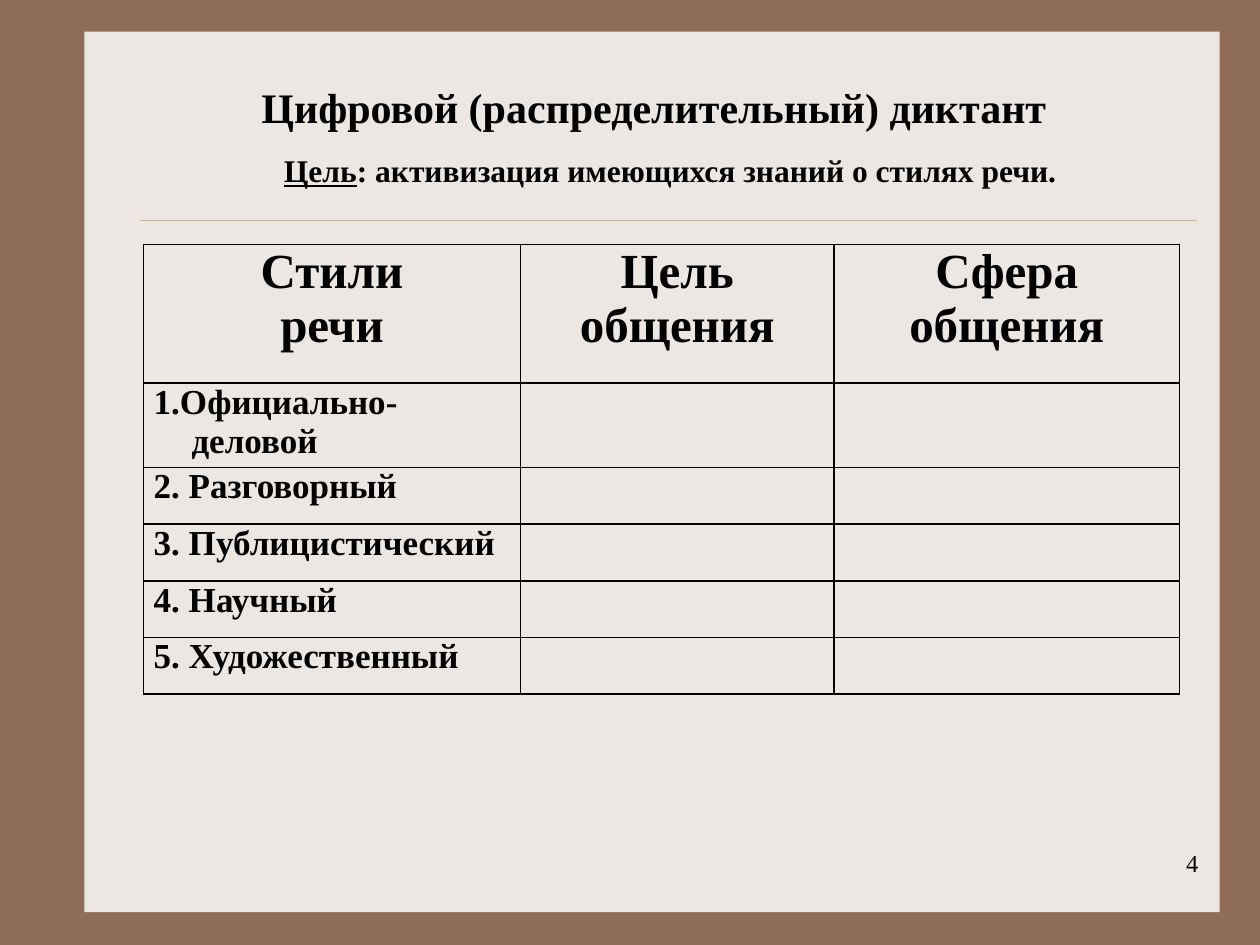
from lxml import etree
from pptx import Presentation
from pptx.dml.color import RGBColor
from pptx.enum.shapes import MSO_CONNECTOR, MSO_SHAPE
from pptx.enum.text import MSO_ANCHOR, PP_ALIGN
from pptx.oxml import parse_xml
from pptx.oxml.ns import nsdecls, qn
from pptx.util import Inches, Pt

FONT = "Times New Roman"
BLACK = RGBColor(0x00, 0x00, 0x00)
BROWN = RGBColor(0x90, 0x6D, 0x58)
CREAM = RGBColor(0xED, 0xE7, 0xE3)
GOLD = RGBColor(0xCB, 0xBD, 0x83)

TITLE = "Цифровой (распределительный) диктант"
GOAL = ["Цель", ": активизация имеющихся знаний о стилях речи."]
PAGE_NUMBER = "4"
HEADERS = ["Стили\nречи", "Цель\nобщения", "Сфера общения"]
STYLES = ["1.Официально-деловой", "2. Разговорный", "3. Публицистический",
          "4. Научный", "5. Художественный"]
COLUMN_WIDTHS = [2.99, 2.49, 2.74]
ROW_HEIGHTS = [1.1, 0.67] + [0.45] * 4


def format_text(text_frame, size, alignment, bold=True):
    for paragraph in text_frame.paragraphs:
        paragraph.alignment = alignment
        for run in paragraph.runs:
            run.font.name = FONT
            run.font.size = Pt(size)
            run.font.bold = bold
            run.font.color.rgb = BLACK


def add_text_box(slide, box):
    text_frame = slide.shapes.add_textbox(*map(Inches, box)).text_frame
    text_frame.word_wrap = True
    return text_frame


def add_borders(cell):
    """Draw a thin black line on each side of the cell."""
    properties = cell._tc.get_or_add_tcPr()
    for index, side in enumerate(("lnL", "lnR", "lnT", "lnB")):
        properties.insert(index, parse_xml(
            f'<a:{side} {nsdecls("a")} w="{Pt(1)}"><a:solidFill>'
            f'<a:srgbClr val="{BLACK}"/></a:solidFill></a:{side}>'))


def add_styles_table(slide):
    frame = slide.shapes.add_table(
        len(ROW_HEIGHTS), len(COLUMN_WIDTHS), Inches(1.14), Inches(1.94),
        Inches(sum(COLUMN_WIDTHS)), Inches(sum(ROW_HEIGHTS)))
    table = frame.table
    table.first_row = table.horz_banding = False
    for column, width in zip(table.columns, COLUMN_WIDTHS):
        column.width = Inches(width)
    for row, height in zip(table.rows, ROW_HEIGHTS):
        row.height = Inches(height)
    for cell in table.iter_cells():
        cell.fill.background()
        cell.margin_left = cell.margin_right = Inches(0.08)
        cell.margin_top = cell.margin_bottom = 0
        add_borders(cell)

    for column, header in enumerate(HEADERS):
        text_frame = table.cell(0, column).text_frame
        text_frame.text = header
        format_text(text_frame, 28, PP_ALIGN.CENTER)
    for row, style in enumerate(STYLES, start=1):
        text_frame = table.cell(row, 0).text_frame
        text_frame.text = style
        format_text(text_frame, 20, PP_ALIGN.JUSTIFY)
    hanging = table.cell(1, 0).text_frame.paragraphs[0]._p.get_or_add_pPr()
    hanging.set("marL", str(Inches(0.3)))
    hanging.set("indent", str(Inches(-0.3)))


def main():
    presentation = Presentation()
    presentation.slide_width, presentation.slide_height = Inches(10), Inches(7.5)
    slide = presentation.slides.add_slide(presentation.slide_layouts[5])
    slide.background.fill.solid()
    slide.background.fill.fore_color.rgb = BROWN

    panel = slide.shapes.add_shape(
        MSO_SHAPE.RECTANGLE, *map(Inches, (0.67, 0.25, 9.01, 6.99)))
    panel.shadow.inherit = False
    panel.fill.solid()
    panel.fill.fore_color.rgb = CREAM
    panel.line.fill.background()

    divider = slide.shapes.add_connector(
        MSO_CONNECTOR.STRAIGHT, *map(Inches, (1.11, 1.75, 9.5, 1.75)))
    divider.line.color.rgb = GOLD
    divider.line.width = Pt(0.25)
    etree.SubElement(divider._element.spPr, qn("a:effectLst"))

    number = add_text_box(slide, (7.53, 6.68, 2.08, 0.5))
    number.text = PAGE_NUMBER
    format_text(number, 14, PP_ALIGN.RIGHT, bold=False)

    add_styles_table(slide)

    goal = add_text_box(slide, (1.3, 1.15, 8.04, 0.4))
    goal.vertical_anchor = MSO_ANCHOR.MIDDLE
    for text in GOAL:
        goal.paragraphs[0].add_run().text = text
    format_text(goal, 18, PP_ALIGN.CENTER)
    goal.paragraphs[0].runs[0].font.underline = True

    title = slide.shapes.title
    title.left, title.top, title.width, title.height = map(
        Inches, (1.25, 0.6, 7.88, 0.5))
    title.text_frame.text = TITLE
    title.text_frame.vertical_anchor = MSO_ANCHOR.TOP
    format_text(title.text_frame, 24, PP_ALIGN.CENTER)
    # The title belongs above the panel
    slide.shapes._spTree.append(title._element)

    presentation.save("out.pptx")


if __name__ == "__main__":
    main()
